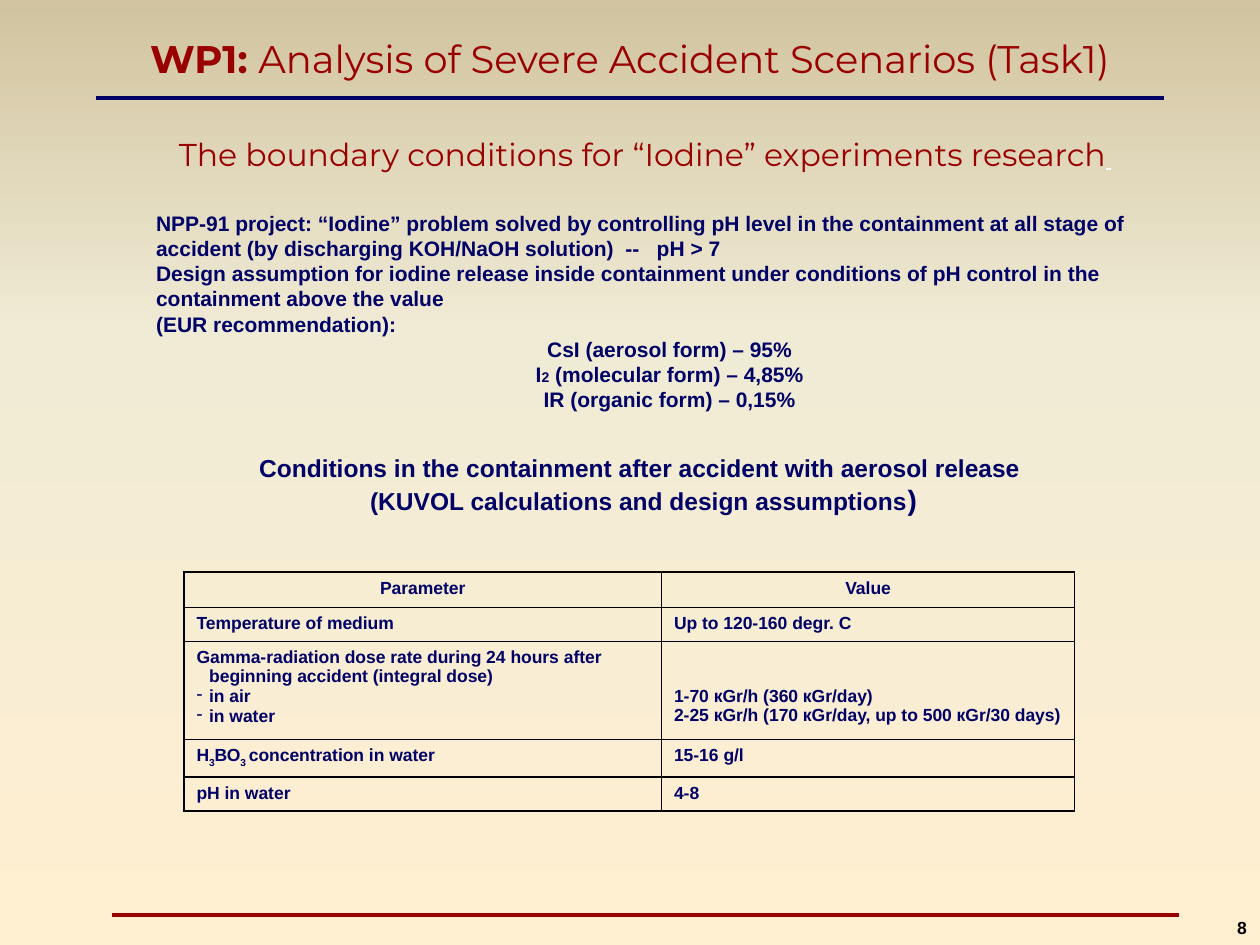
from dataclasses import dataclass

from lxml.etree import SubElement
from pptx import Presentation
from pptx.dml.color import RGBColor
from pptx.enum.shapes import MSO_CONNECTOR as Connector
from pptx.enum.text import MSO_ANCHOR as Anchor, PP_ALIGN as Align
from pptx.oxml.ns import qn
from pptx.util import Inches, Pt


@dataclass(frozen=True)
class Theme:
    navy: str = "000066"
    red: str = "990000"
    black: str = "000000"
    white: str = "FFFFFF"
    backdrop: tuple = ((0, "D1C39F"), (35, "F0EBD5"), (100, "FFEFD1"))
    heading_font: str = "Montserrat"
    body_font: str = "Arial"
    title: int = 22
    subtitle: int = 18
    section: int = 14
    body: int = 12
    small: int = 10
    rule: float = 2.25
    border: int = 1


THEME = Theme()
COLUMNS, ROWS = 100, 75  # grid of square cells over the slide
HANG, BULLET_HANG = 3.7, 1  # hanging indents in grid cells

HEADING = {"name": THEME.heading_font, "color": THEME.red, "bold": False}
BODY = {"name": THEME.body_font, "color": THEME.navy, "bold": True}
TITLE = HEADING | {"size": THEME.title}
SUBTITLE = HEADING | {"size": THEME.subtitle}
SECTION = BODY | {"size": THEME.section}
TEXT = BODY | {"size": THEME.body}
SMALL = BODY | {"size": THEME.small}
PAGE = SMALL | {"color": THEME.black}

# A paragraph is a string, or a list of strings and (string, format) pairs
RELEASE_INTRO = [
    "NPP-91 project: “Iodine” problem solved by controlling pH level in the containment "
    "at all stage of accident (by discharging KOH/NaOH solution)  --   рН > 7",
    "Design assumption for iodine release inside containment under conditions of pH "
    "control in the containment above the value",
    "(EUR recommendation):",
]
IODINE_FORMS = [
    "CsI (aerosol form) – 95%",
    ["I", ("2", {"size": 8}), " (molecular form) – 4,85%"],
    "IR (organic form) – 0,15%",
]
SUBSCRIPT = {"baseline": "-30000"}
CONDITIONS = [
    (["Parameter"], ["Value"]),
    (["Temperature of medium"], ["Up to 120-160 degr. С"]),
    (["Gamma-radiation dose rate during 24 hours after beginning accident (integral dose)",
      "in air", "in water"],
     ["1-70 кGr/h (360 кGr/day)", "2-25 кGr/h (170 кGr/day, up to 500 кGr/30 days)"]),
    ([["Н", ("3", SUBSCRIPT), "ВО", ("3 ", SUBSCRIPT), "concentration in water"]],
     ["15-16 g/l"]),
    (["рН in water"], ["4-8"]),
]
COLUMN_WIDTHS = (37.9, 32.8)
ROW_HEIGHTS = (2.8, 2.7, 7.8, 2.8, 2.7)
DOSE_ROW = 2


def cells(count):
    return Inches(count * 10 / COLUMNS)


def format_run(run, style):
    for key, value in style.items():
        if key == "color":
            run.font.color.rgb = RGBColor.from_string(value)
        elif key == "baseline":
            run._r.get_or_add_rPr().set(key, value)
        else:
            setattr(run.font, key, Pt(value) if key == "size" else value)


def write(frame, paragraphs, style, align=Align.LEFT):
    """Fill a text frame and return its paragraphs."""
    for index, content in enumerate(paragraphs):
        line = frame.paragraphs[0] if index == 0 else frame.add_paragraph()
        line.alignment = align
        for part in [content] if isinstance(content, str) else content:
            words, changes = (part, {}) if isinstance(part, str) else part
            run = line.add_run()
            run.text = words
            format_run(run, style | changes)
    return frame.paragraphs


def add_text(slide, box, paragraphs, style, align=Align.CENTER, anchor=Anchor.TOP, wrap=True):
    frame = slide.shapes.add_textbox(*map(cells, box)).text_frame
    frame.word_wrap = wrap
    frame.vertical_anchor = anchor
    return write(frame, paragraphs, style, align)


def add_rule(slide, left, right, row, color):
    rule = slide.shapes.add_connector(
        Connector.STRAIGHT, cells(left), cells(row), cells(right), cells(row))
    rule.line.color.rgb = RGBColor.from_string(color)
    rule.line.width = Pt(THEME.rule)
    SubElement(rule._element.spPr, qn("a:effectLst"))


def add_solid(parent, color):
    fill = SubElement(parent, qn("a:solidFill"))
    SubElement(fill, qn("a:srgbClr"), val=color)


def hang(paragraph, indent, bullet=None):
    properties = paragraph._p.get_or_add_pPr()
    properties.set("marL", str(cells(indent)))
    properties.set("indent", str(-cells(indent)))
    if bullet:
        SubElement(properties, qn("a:buChar"), char=bullet)


def outline_cell(cell):
    properties = cell._tc.get_or_add_tcPr()
    for side in ("lnL", "lnR", "lnT", "lnB"):
        add_solid(SubElement(properties, qn(f"a:{side}"), w=str(Pt(THEME.border))), THEME.black)
    cell.fill.background()


def add_conditions_table(slide, left, top):
    table = slide.shapes.add_table(
        len(ROW_HEIGHTS), len(COLUMN_WIDTHS), cells(left), cells(top),
        cells(sum(COLUMN_WIDTHS)), cells(sum(ROW_HEIGHTS))).table
    table.first_row = table.horz_banding = False
    for column, width in zip(table.columns, COLUMN_WIDTHS):
        column.width = cells(width)
    for r, (row, height) in enumerate(zip(table.rows, ROW_HEIGHTS)):
        row.height = cells(height)
        for c, cell in enumerate(row.cells):
            outline_cell(cell)
            align = Align.CENTER if r == 0 else Align.LEFT
            lines = write(cell.text_frame, CONDITIONS[r][c], SMALL, align)
            listed = (r, c) == (DOSE_ROW, 0)
            for index, line in enumerate(lines):
                hang(line, BULLET_HANG if listed else HANG, "-" if listed and index else None)
    # Dose values line up with the air and water items
    table.cell(DOSE_ROW, 1).margin_top = cells(3.6)


def paint_background(slide):
    fill = slide.background.fill
    fill.gradient()
    fill.gradient_angle = 270
    stops = slide._element.find(f".//{qn('a:gsLst')}")
    for stop in list(stops):
        stops.remove(stop)
    for position, color in THEME.backdrop:
        stop = SubElement(stops, qn("a:gs"), pos=str(position * 1000))
        SubElement(stop, qn("a:srgbClr"), val=color)


def main():
    deck = Presentation()
    deck.slide_width, deck.slide_height = cells(COLUMNS), cells(ROWS)
    slide = deck.slides.add_slide(deck.slide_layouts[6])
    paint_background(slide)

    # Header and footer rules
    add_rule(slide, 7.6, 92.4, 7.8, THEME.navy)
    add_rule(slide, 8.9, 93.6, 72.6, THEME.red)

    # Headings
    add_text(slide, (0, 2.1, COLUMNS, 5),
             [[("WP1: ", {"bold": True}), "Analysis of Severe Accident Scenarios (Task1)"]],
             TITLE, anchor=Anchor.MIDDLE)
    underlined_end = (" ", {"size": 11, "color": THEME.white, "underline": True})
    add_text(slide, (8.7, 9.9, 85, 4.7),
             [["The boundary conditions for “Iodine” experiments research", underlined_end]],
             SUBTITLE, anchor=Anchor.MIDDLE)

    # Iodine release assumptions
    release = add_text(slide, (11.4, 16.2, 83.5, 17), RELEASE_INTRO + IODINE_FORMS, TEXT,
                       Align.LEFT)
    for line in release[len(RELEASE_INTRO):]:
        line.alignment = Align.CENTER

    # Containment conditions
    add_text(slide, (18.5, 35.5, 64.6, 6),
             ["Conditions in the containment after accident with aerosol release",
              [" (KUVOL calculations and design assumptions", (")", {"size": 16})]], SECTION)
    add_conditions_table(slide, 14.6, 45.4)

    # Page number
    add_text(slide, (97.2, 72.3, 2.8, 2.7), ["8"], PAGE, Align.LEFT, wrap=False)

    deck.save("out.pptx")


if __name__ == "__main__":
    main()
